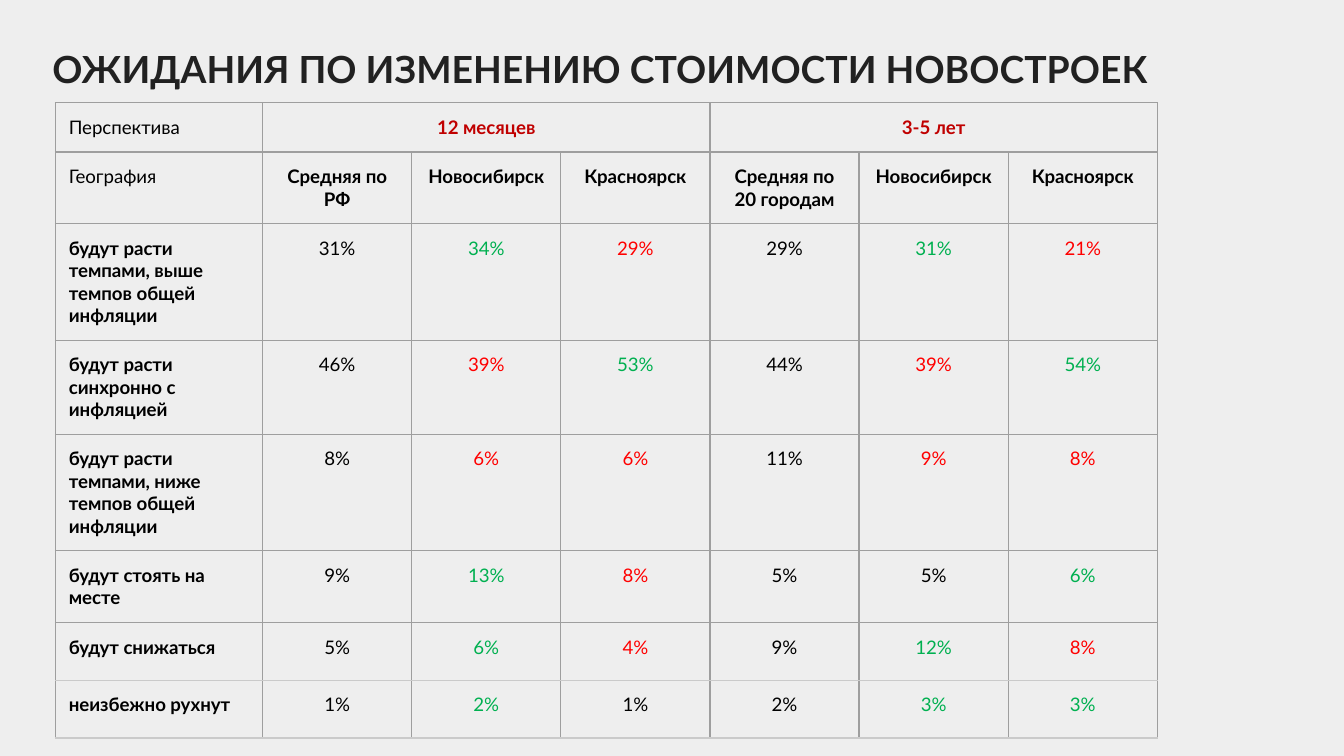
from lxml import etree
from pptx import Presentation
from pptx.dml.color import RGBColor
from pptx.enum import text
from pptx.oxml import ns
from pptx.util import Pt

# Content
TITLE = "ОЖИДАНИЯ ПО ИЗМЕНЕНИЮ СТОИМОСТИ НОВОСТРОЕК"
PERIODS = ["12 месяцев", "3-5 лет"]
CITIES = ["Новосибирск", "Красноярск"]
AVERAGES = ["Средняя по РФ", "Средняя по 20 городам"]
# Each forecast: average and two cities, for both periods, in percent
FORECASTS = [
    ("будут расти темпами, выше темпов общей инфляции", (31, 34, 29), (29, 31, 21)),
    ("будут расти синхронно с инфляцией", (46, 39, 53), (44, 39, 54)),
    ("будут расти темпами, ниже темпов общей инфляции", (8, 6, 6), (11, 9, 8)),
    ("будут стоять на месте", (9, 13, 8), (5, 5, 6)),
    ("будут снижаться", (5, 6, 4), (9, 12, 8)),
    ("неизбежно рухнут", (1, 2, 1), (2, 3, 3)),
]

# Style
FONT = "Lato"
BLACK, GREEN, RED, DARK_RED = "000000", "00B050", "FF0000", "C00000"
GREY, PALE = "9E9E9E", "CACACA"
INSET = Pt(7.2)
COLUMNS = [111] + [79.9] * 6
ROWS = [17.3, 15.8] + [31] * len(FORECASTS)


def color(value):
    return RGBColor.from_string(value)


def style(para, size, shade, bold):
    para.font.name = FONT
    para.font.size = Pt(size)
    para.font.bold = bold
    para.font.color.rgb = color(shade)


def set_insets(box):
    box.margin_left = box.margin_right = INSET
    box.margin_top = box.margin_bottom = INSET


def set_borders(cell, top, bottom):
    properties = cell._tc.get_or_add_tcPr()
    sides = [("lnL", GREY), ("lnR", GREY), ("lnT", top), ("lnB", bottom)]
    for index, (side, shade) in enumerate(sides):
        line = etree.Element(ns.qn("a:" + side), w=str(Pt(0.75)))
        fill = etree.SubElement(line, ns.qn("a:solidFill"))
        etree.SubElement(fill, ns.qn("a:srgbClr"), val=shade)
        properties.insert(index, line)


def write(cell, words, shade=BLACK, bold=False, centered=True):
    cell.text = words
    para = cell.text_frame.paragraphs[0]
    style(para, 10, shade, bold)
    para.alignment = text.PP_ALIGN.CENTER if centered else text.PP_ALIGN.LEFT


def compare(value, average):
    """Green above the average, red below it."""
    return GREEN if value > average else RED if value < average else BLACK


# Page
deck = Presentation()
deck.slide_width, deck.slide_height = Pt(720), Pt(405)
page = deck.slides.add_slide(deck.slide_layouts[5])
page.background.fill.solid()
page.background.fill.fore_color.rgb = color("EEEEEE")

# Title
title = page.shapes.title
title.left, title.top, title.width, title.height = Pt(20.9), Pt(17.3), Pt(656), Pt(52)
frame = title.text_frame
frame.text = TITLE
frame.word_wrap = True
frame.auto_size = text.MSO_AUTO_SIZE.NONE
frame.vertical_anchor = text.MSO_ANCHOR.TOP
set_insets(frame)
style(frame.paragraphs[0], 20, "212121", True)
frame.paragraphs[0].alignment = text.PP_ALIGN.LEFT

# Table grid
table = page.shapes.add_table(len(ROWS), len(COLUMNS), Pt(29.7), Pt(55),
                              Pt(sum(COLUMNS)), Pt(sum(ROWS))).table
table.first_row = table.horz_banding = False
for column, width in zip(table.columns, COLUMNS):
    column.width = Pt(width)
for row, height in zip(table.rows, ROWS):
    row.height = Pt(height)
last = len(ROWS) - 1
for r in range(len(ROWS)):
    for c in range(len(COLUMNS)):
        cell = table.cell(r, c)
        set_insets(cell)
        cell.fill.background()
        set_borders(cell, PALE if r == last else GREY, PALE if r >= last - 1 else GREY)
        write(cell, "")

# Header rows
write(table.cell(0, 0), "Перспектива", centered=False)
write(table.cell(1, 0), "География", centered=False)
for group, (period, average) in enumerate(zip(PERIODS, AVERAGES)):
    first = 1 + 3 * group
    table.cell(0, first).merge(table.cell(0, first + 2))
    write(table.cell(0, first), period, DARK_RED, True)
    for c, place in enumerate([average] + CITIES, first):
        write(table.cell(1, c), place, bold=True)

# Forecast rows
for r, (label, *groups) in enumerate(FORECASTS, 2):
    write(table.cell(r, 0), label, bold=True, centered=False)
    for group, values in enumerate(groups):
        for c, value in enumerate(values, 1 + 3 * group):
            write(table.cell(r, c), f"{value}%", compare(value, values[0]))

deck.save("out.pptx")
